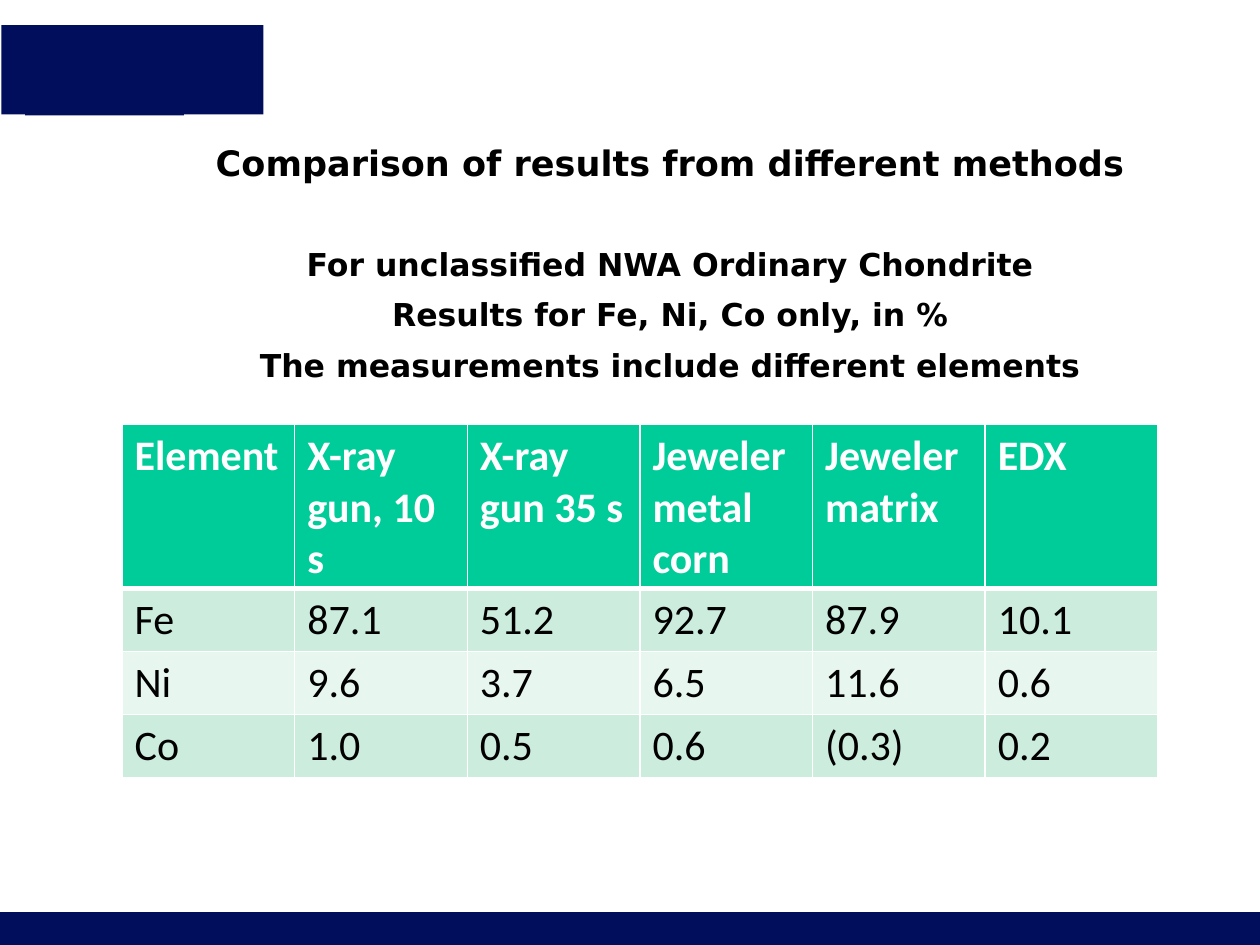
"""Builds a slide comparing meteorite measurements from different methods."""
from lxml.etree import SubElement
from pptx import Presentation
from pptx.dml.color import RGBColor
from pptx.enum.shapes import MSO_SHAPE as Preset
from pptx.enum.text import PP_ALIGN as Align
from pptx.oxml.ns import qn
from pptx.util import Cm, Pt

NAVY = RGBColor(0x00, 0x0E, 0x5B)
GREEN = RGBColor(0x00, 0xCC, 0x99)
MINT = RGBColor(0xCC, 0xEC, 0xDE)
PALE = RGBColor(0xE7, 0xF6, 0xEF)
BLACK = RGBColor(0x00, 0x00, 0x00)
WHITE = RGBColor(0xFF, 0xFF, 0xFF)

BLOCKS = [(0.03, 0.51, 5.28, 1.8), (0, 18.39, 25.4, 0.66), (0.51, 0.53, 3.2, 1.8)]
HEADINGS = [
    ("Comparison of results from different methods", 20, 0),
    ("For unclassified NWA Ordinary Chondrite", 18, 33),
    ("Results for Fe, Ni, Co only, in %", 18, 5),
    ("The measurements include different elements", 18, 5),
]
RESULTS = [
    ("Element", "X-ray gun, 10 s", "X-ray gun 35 s", "Jeweler metal corn", "Jeweler\nmatrix", "EDX"),
    ("Fe", "87.1", "51.2", "92.7", "87.9", "10.1"),
    ("Ni", "9.6", "3.7", "6.5", "11.6", "0.6"),
    ("Co", "1.0", "0.5", "0.6", "(0.3)", "0.2"),
]


class SlideBuilder:
    heading_font = "DejaVu Sans"
    table_font = "Calibri"

    def __init__(self, slide):
        self.slide = slide

    def apply(self, target, formats):
        for name, value in formats.items():
            setattr(target, name, value)

    def style(self, paragraph, color, **formats):
        self.apply(paragraph.font, formats)
        paragraph.font.color.rgb = color

    def block(self, *bounds):
        block = self.slide.shapes.add_shape(Preset.RECTANGLE, *map(Cm, bounds))
        block.shadow.inherit = False
        block.fill.solid()
        block.fill.fore_color.rgb = NAVY
        block.line.fill.background()

    def headings(self, lines, *bounds):
        frame = self.slide.shapes.add_textbox(*map(Cm, bounds)).text_frame
        self.apply(frame, dict(word_wrap=True, margin_left=0, margin_top=0,
                               margin_right=0, margin_bottom=0))
        for index, (wording, size, before) in enumerate(lines):
            heading = frame.add_paragraph() if index else frame.paragraphs[0]
            heading.text = wording
            self.apply(heading, dict(alignment=Align.CENTER, line_spacing=0.87,
                                     space_before=Pt(before), space_after=Pt(5)))
            self.style(heading, BLACK, name=self.heading_font, size=Pt(size), bold=True)

    def borders(self, cell, **widths):
        properties = cell._tc.get_or_add_tcPr()
        for side, width in widths.items():
            line = SubElement(properties, qn(f"a:ln{side}"), w=str(Pt(width)))
            SubElement(SubElement(line, qn("a:solidFill")), qn("a:srgbClr"), val=str(WHITE))

    def table(self, rows, left, top, column_width, header_height, row_height):
        heights = [header_height] + [row_height] * (len(rows) - 1)
        columns = len(rows[0])
        table = self.slide.shapes.add_table(
            len(rows), columns, Cm(left), Cm(top),
            Cm(column_width * columns), Cm(sum(heights))).table
        for column in table.columns:
            column.width = Cm(column_width)
        for r, (values, height) in enumerate(zip(rows, heights)):
            table.rows[r].height = Cm(height)
            fill = GREEN if r == 0 else MINT if r % 2 else PALE
            for c, value in enumerate(values):
                cell = table.cell(r, c)
                cell.text = value
                self.borders(cell, L=1, R=1, T=3 if r == 1 else 1, B=1 if r else 3)
                cell.fill.solid()
                cell.fill.fore_color.rgb = fill
                for paragraph in cell.text_frame.paragraphs:
                    self.style(paragraph, BLACK if r else WHITE, name=self.table_font,
                               size=Pt(24), bold=r == 0)


def main():
    deck = Presentation()
    deck.slide_width, deck.slide_height = Cm(25.4), Cm(19.05)
    builder = SlideBuilder(deck.slides.add_slide(deck.slide_layouts[6]))
    for bounds in BLOCKS:
        builder.block(*bounds)
    builder.headings(HEADINGS, 2.08, 2.97, 22.86, 11.18)
    builder.table(RESULTS, 2.46, 8.56, 3.48, 2.69, 1.09)
    deck.save("out.pptx")


if __name__ == "__main__":
    main()
